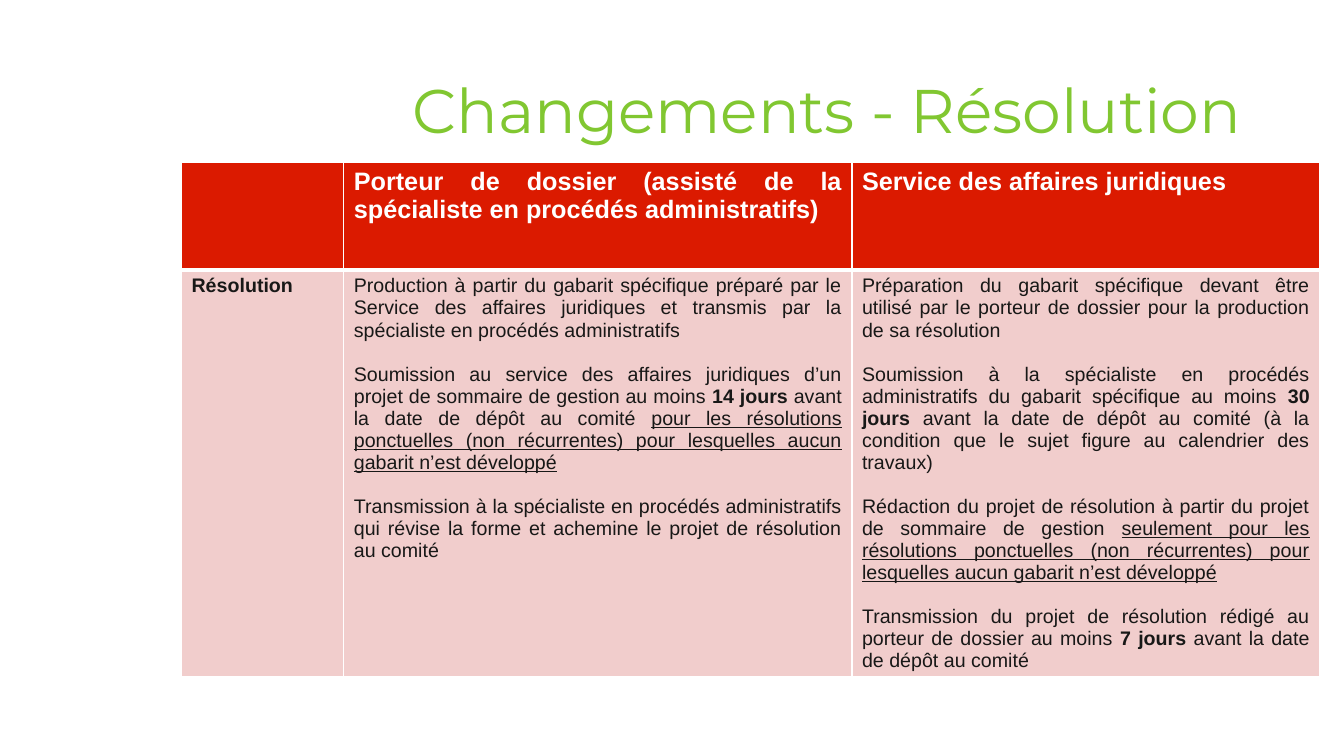
from lxml import etree
from pptx import Presentation
from pptx.dml.color import RGBColor
from pptx.enum.text import MSO_ANCHOR, PP_ALIGN
from pptx.oxml.ns import qn
from pptx.util import Inches, Pt

RED = RGBColor(0xDB, 0x1A, 0x00)
PINK = RGBColor(0xF1, 0xCD, 0xCC)
GREEN = RGBColor(0x81, 0xC7, 0x31)
WHITE = RGBColor(0xFF, 0xFF, 0xFF)
INK = RGBColor(0x18, 0x18, 0x17)
RIGHT, JUSTIFY, MIDDLE = PP_ALIGN.RIGHT, PP_ALIGN.JUSTIFY, MSO_ANCHOR.MIDDLE

WIDE, HIGH = 13.33, 7.5
TITLE_BOX = (1.94, 0.4, 10.48, 1.45)
TABLE_BOX = (1.8, 1.61, 11.29, 5.1)
COLS = (1.61, 5.04, 4.64)
ROWS = (1.07, 4.03)
GAP = Pt(15.7)

HEAD = {"name": "Arial", "size": Pt(18), "bold": True}
BODY = {"name": "Arial", "size": Pt(14), "bold": False}
BOLD = {"bold": True}
LINE = {"underline": True}

# Each cell is a list of paragraphs, each paragraph a list of (text, format) runs.
HEADER = [
    [],
    [[("Porteur de dossier (assisté de la spécialiste en procédés administratifs)", {})]],
    [[("Service des affaires juridiques", {})]],
]
DUTIES = [
    [[("Résolution", BOLD)]],
    [
        [("Production à partir du gabarit spécifique préparé par le Service des affaires "
          "juridiques et transmis par la spécialiste en procédés administratifs", {})],
        [("Soumission au service des affaires juridiques d’un projet de sommaire de "
          "gestion au moins ", {}),
         ("14 jours", BOLD),
         (" avant la date de dépôt au comité ", {}),
         ("pour les résolutions ponctuelles (non récurrentes) pour lesquelles aucun "
          "gabarit n’est développé", LINE)],
        [("Transmission à la spécialiste en procédés administratifs qui révise la forme "
          "et achemine le projet de résolution au comité", {})],
    ],
    [
        [("Préparation du gabarit spécifique devant être utilisé par le porteur de "
          "dossier pour la production de sa résolution", {})],
        [("Soumission à la spécialiste en procédés administratifs du gabarit spécifique "
          "au moins ", {}),
         ("30 jours", BOLD),
         (" avant la date de dépôt au comité (à la condition que le sujet figure au "
          "calendrier des travaux)", {})],
        [("Rédaction du projet de résolution à partir du projet de sommaire de gestion ", {}),
         ("seulement pour les résolutions ponctuelles (non récurrentes) pour lesquelles "
          "aucun gabarit n’est développé", LINE)],
        [("Transmission du projet de résolution rédigé au porteur de dossier au moins ", {}),
         ("7 jours ", BOLD),
         ("avant la date de dépôt au comité", {})],
    ],
]


def style(font, color, form):
    for key, value in form.items():
        setattr(font, key, value)
    font.color.rgb = color


def edge(cell, widths):
    """Draw white borders, with widths in points keyed by side."""
    props = cell._tc.get_or_add_tcPr()
    for side, width in widths.items():
        line = etree.SubElement(props, qn(f"a:ln{side}"), w=str(Pt(width)))
        fill = etree.SubElement(line, qn("a:solidFill"))
        etree.SubElement(fill, qn("a:srgbClr"), val=str(WHITE))


def fill_cell(cell, paras, back, color, form, widths):
    edge(cell, widths)
    cell.fill.solid()
    cell.fill.fore_color.rgb = back
    frame = cell.text_frame
    for i, runs in enumerate(paras):
        para = frame.add_paragraph() if i else frame.paragraphs[0]
        para.alignment = JUSTIFY
        if i:
            para.space_before = GAP
        for text, extra in runs:
            run = para.add_run()
            run.text = text
            style(run.font, color, {**form, **extra})


def add_title(slide, box):
    title = slide.shapes.title
    for key, value in zip(("left", "top", "width", "height"), box):
        setattr(title, key, Inches(value))
    frame = title.text_frame
    frame.text = "Changements - Résolution"
    frame.vertical_anchor = MIDDLE
    para = frame.paragraphs[0]
    para.alignment = RIGHT
    para.line_spacing = 0.9
    style(para.runs[0].font, GREEN, {"name": "Montserrat", "size": Pt(44)})


def add_duties(slide, box):
    table = slide.shapes.add_table(len(ROWS), len(COLS), *map(Inches, box)).table
    for col, width in zip(table.columns, COLS):
        col.width = Inches(width)
    for row, height in zip(table.rows, ROWS):
        row.height = Inches(height)
    looks = (
        (HEADER, RED, WHITE, HEAD, {"L": 1, "R": 1, "T": 1, "B": 3}),
        (DUTIES, PINK, INK, BODY, {"L": 1, "R": 1, "T": 3, "B": 1}),
    )
    for row, (texts, *look) in zip(table.rows, looks):
        for cell, paras in zip(row.cells, texts):
            fill_cell(cell, paras, *look)


def main():
    deck = Presentation()
    deck.slide_width, deck.slide_height = Inches(WIDE), Inches(HIGH)
    slide = deck.slides.add_slide(deck.slide_layouts[5])
    add_title(slide, TITLE_BOX)
    add_duties(slide, TABLE_BOX)
    deck.save("out.pptx")


if __name__ == "__main__":
    main()
